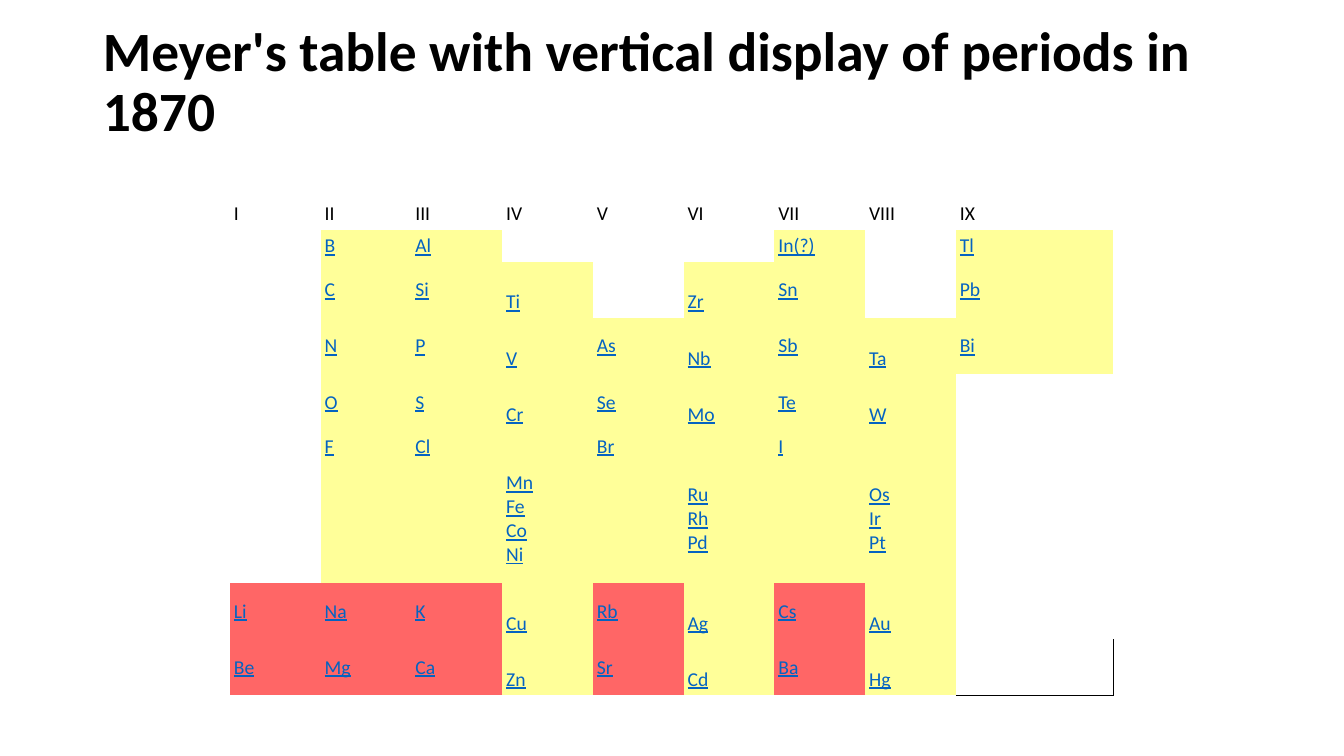
from lxml import etree
from pptx import Presentation
from pptx import util as u
from pptx.dml.color import RGBColor
from pptx.enum import text
from pptx.oxml import ns

LINE = 0.24  # height of one line of cell text
PAD = 0.04
FILLS = {"w": "FFFFFF", "y": "FFFF99", "r": "FF6666"}
HEADS = ["I", "II", "III", "IV", "V", "VI", "VII", "VIII", "IX"]
ROWS = [
    ["", "B", "Al", "", "", "", "In(?)", "", "Tl"],
    ["", "C", "Si", "Ti", "", "Zr", "Sn", "", "Pb"],
    ["", "N", "P", "V", "As", "Nb", "Sb", "Ta", "Bi"],
    ["", "O", "S", "Cr", "Se", "Mo", "Те", "W", ""],
    ["", "F", "Cl", "Mn\nFe\nCo\nNi", "Br", "Ru\nRh\nPd", "I", "Os\nIr\nPt", ""],
    ["Li", "Na", "K", "Cu", "Rb", "Ag", "Cs", "Au", ""],
    ["Be", "Mg", "Ca", "Zn", "Sr", "Cd", "Ba", "Hg", ""],
]
TINTS = ["wyywwwywy", "wyyywyywy", "wyyyyyyyy", "wyyyyyyyw",
         "wyyyyyyyw", "rrryryryw", "rrryryryw"]
LOW = (3, 5, 7)  # subgroup columns, set one line lower
TALL = 5         # row that holds the triads
WIDTHS = [0.9] * 8 + [1.56]
HEIGHTS = [0.32, 0.32, 0.55, 0.55, 0.55, 1.5, 0.55, 0.55]


def color(code):
    return RGBColor.from_string(code)


class Page:
    face, ink, link = "Calibri", "000000", "0563C1"

    def __init__(self, deck):
        self.slide = deck.slides.add_slide(deck.slide_layouts[5])

    def style(self, para, size, code, bold=False, under=False):
        font = para.font
        font.name, font.size, font.bold = self.face, u.Pt(size), bold
        font.underline = under
        font.color.rgb = color(code)

    def title(self, words, left, top, width, height):
        box = self.slide.shapes.title
        box.left, box.top = u.Inches(left), u.Inches(top)
        box.width, box.height = u.Inches(width), u.Inches(height)
        frame = box.text_frame
        frame.text = words
        frame.word_wrap = True
        frame.auto_size = text.MSO_AUTO_SIZE.NONE
        frame.vertical_anchor = text.MSO_ANCHOR.MIDDLE
        frame.margin_bottom = u.Inches(0.65)
        para = frame.paragraphs[0]
        para.alignment = text.PP_ALIGN.LEFT
        para.line_spacing = 0.9
        self.style(para, 39.6, self.ink, bold=True)

    def table(self, left, top, widths, heights):
        frame = self.slide.shapes.add_table(
            len(heights), len(widths), u.Inches(left), u.Inches(top),
            u.Inches(sum(widths)), u.Inches(sum(heights)))
        grid = frame.table
        # Plain style without grid lines
        props = grid._tbl.tblPr
        props.find(ns.qn("a:tableStyleId")).text = \
            "{2D5ABB26-0587-4C30-8999-92F81FD0307C}"
        grid.first_row = grid.horz_banding = False
        for col, width in zip(grid.columns, widths):
            col.width = u.Inches(width)
        for row, height in zip(grid.rows, heights):
            row.height = u.Inches(height)
        return grid

    def cell(self, cell, words, fill, code, under=False, above=0, below=0):
        cell.fill.solid()
        cell.fill.fore_color.rgb = color(fill)
        cell.vertical_anchor = text.MSO_ANCHOR.MIDDLE
        cell.margin_left = cell.margin_right = u.Inches(PAD)
        cell.margin_top = u.Inches(PAD + above * LINE)
        cell.margin_bottom = u.Inches(PAD + below * LINE)
        para = cell.text_frame.paragraphs[0]
        para.text = words
        self.style(para, 14, code, under=under)

    def border(self, cell, sides):
        props = cell._tc.get_or_add_tcPr()
        for spot, side in enumerate(sides):
            line = etree.Element(ns.qn("a:ln" + side), w="9525")
            fill = etree.SubElement(line, ns.qn("a:solidFill"))
            etree.SubElement(fill, ns.qn("a:srgbClr"), val=self.ink)
            props.insert(spot, line)


def main():
    deck = Presentation()
    deck.slide_width, deck.slide_height = u.Inches(13.33), u.Inches(7.5)
    page = Page(deck)

    # Heading
    page.title("Meyer's table with vertical display of periods in 1870",
               0.92, 0.4, 11.5, 1.45)

    # Group numbers
    grid = page.table(2.28, 1.96, WIDTHS, HEIGHTS)
    for c, head in enumerate(HEADS):
        page.cell(grid.cell(0, c), head, FILLS["w"], page.ink)

    # Elements
    for r, (row, tints) in enumerate(zip(ROWS, TINTS), 1):
        for c, (name, tint) in enumerate(zip(row, tints)):
            above = 1 if name and c in LOW else 0
            below = 5 if name and r == TALL and c not in LOW else 0
            page.cell(grid.cell(r, c), name, FILLS[tint], page.link,
                      bool(name), above, below)

    # Corner lines
    page.border(grid.cell(len(ROWS), len(HEADS) - 1), "RB")
    deck.save("out.pptx")


if __name__ == "__main__":
    main()
